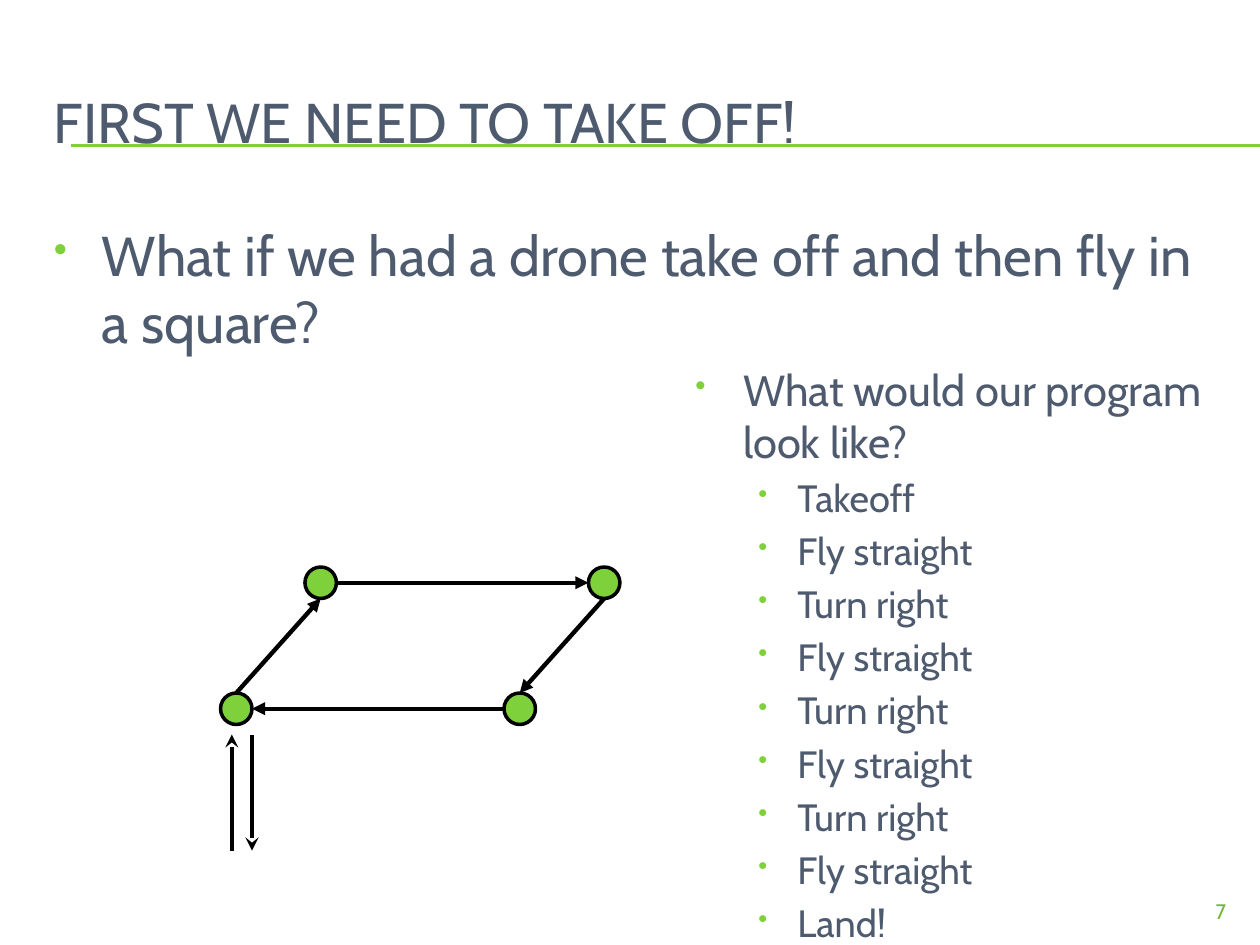
from dataclasses import dataclass

from lxml.etree import SubElement
from pptx import Presentation
from pptx.dml.color import RGBColor as RGB
from pptx.enum.shapes import MSO_CONNECTOR as LINE, MSO_SHAPE as SHAPE
from pptx.enum.text import MSO_ANCHOR as ANCHOR, PP_ALIGN as ALIGN
from pptx.oxml.ns import qn
from pptx.util import Inches, Pt


@dataclass(frozen=True)
class Theme:
    font: str = "Cabin"
    text: RGB = RGB(0x4E, 0x5B, 0x6F)
    green: RGB = RGB(0x7F, 0xD1, 0x3B)
    dark: RGB = RGB(0x70, 0xB8, 0x34)
    black: RGB = RGB(0, 0, 0)
    head: float = 32
    ask: float = 24.8
    step: float = 21.7
    num: float = 12


T = Theme()
deck = Presentation()
deck.slide_width, deck.slide_height = Inches(10), Inches(7.5)
slide = deck.slides.add_slide(deck.slide_layouts[6])
shapes = slide.shapes


def add_text(area, items, color=T.text):
    """Add a text box; each item is (text, size, level), level None for no bullet."""
    frame = shapes.add_textbox(*map(Inches, area)).text_frame
    frame.word_wrap = True
    for i, (text, size, level) in enumerate(items):
        para = frame.paragraphs[0] if i == 0 else frame.add_paragraph()
        para.text = text
        if level is not None:
            para.level = level
            left, hang = ((0.38, 0.38), (0.81, 0.31))[level]
            props = para._p.get_or_add_pPr()
            props.set("marL", str(Inches(left)))
            props.set("indent", str(-Inches(hang)))
            tint = SubElement(props, qn("a:buClr"))
            SubElement(tint, qn("a:srgbClr"), val=str(T.green))
            SubElement(props, qn("a:buSzPct"), val="70000")
            SubElement(props, qn("a:buChar"), char="•")
            if i:
                para.space_before = Pt(round(size * 0.2, 1))
        font = para.runs[0].font
        font.name, font.size = T.font, Pt(size)
        font.color.rgb = color
    return frame


def add_line(start, end, color, width, tip=None):
    line = shapes.add_connector(LINE.STRAIGHT, *map(Inches, (*start, *end)))
    line.line.color.rgb = color
    line.line.width = Pt(width)
    if tip:
        SubElement(line.line._ln, qn("a:tailEnd"), type=tip)
    SubElement(line._element.spPr, qn("a:effectLst"))


# Heading
for y in (1.15, 1.16):
    add_line((0.56, y), (10, y), T.green, 0.75)
title = add_text((0.33, 0.5, 9.5, 0.92),
                 [("FIRST WE NEED TO TAKE OFF!", T.head, None)])
title.vertical_anchor = ANCHOR.MIDDLE
add_text((0.33, 1.7, 9.5, 1.38),
         [("What if we had a drone take off and then fly in a square?", T.head, 0)])
number = add_text((9, 7.08, 0.83, 0.27), [("7", T.num, None)], T.dark)
number.paragraphs[0].alignment = ALIGN.RIGHT

# Corners of the flight, in flying order
SIZE = 0.25
MID = SIZE / 2
corners = [(1.75, 5.5), (2.42, 4.5), (4.67, 4.5), (4, 5.5)]
for x, y in corners:
    dot = shapes.add_shape(SHAPE.OVAL, *map(Inches, (x, y, SIZE, SIZE)))
    dot.shadow.inherit = False
    dot.fill.solid()
    dot.fill.fore_color.rgb = T.green
    dot.line.color.rgb = T.black
    dot.line.width = Pt(2)

# Each leg leaves one side of a dot and enters the facing side of the next
top, left, base, right = (MID, 0), (0, MID), (MID, SIZE), (SIZE, MID)
legs = [(top, base), (right, left), (base, top), (left, right)]
for i, (out, into) in enumerate(legs):
    (ax, ay), (bx, by) = corners[i], corners[(i + 1) % len(corners)]
    add_line((ax + out[0], ay + out[1]), (bx + into[0], by + into[1]),
             T.black, 2.5, "triangle")

# Takeoff and landing
add_line((1.84, 6.75), (1.84, 5.83), T.black, 2.5, "stealth")
add_line((2, 5.83), (2, 6.75), T.black, 2.5, "stealth")

# Program
steps = ["Takeoff", *["Fly straight", "Turn right"] * 3, "Fly straight", "Land!"]
add_text((5.42, 2.83, 4.26, 4.17),
         [("What would our program look like?", T.ask, 0),
          *((step, T.step, 1) for step in steps)])

deck.save("out.pptx")
